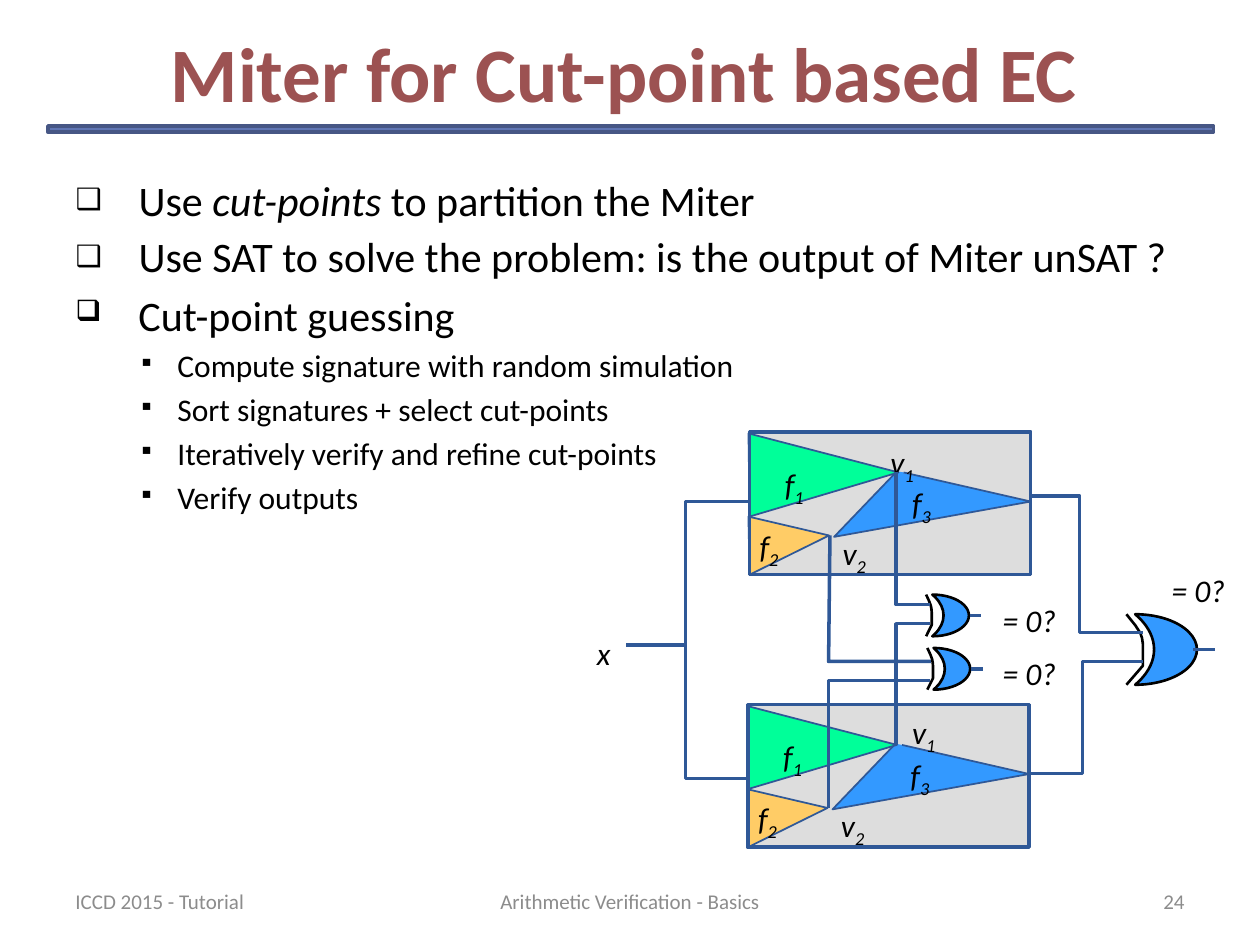
from lxml import etree
from pptx import Presentation
from pptx.dml.color import RGBColor
from pptx.enum import shapes, text
from pptx.oxml.ns import qn
from pptx.util import Pt

INK, WIRE, BLUE = "000000", "2F5897", "3399FF"


def rgb(value):
    """Turn a hex string into a colour."""
    return RGBColor.from_string(value)


def write(p, content, size=18, color=INK, bold=False, italic=False, sub=False):
    """Add one formatted run to a paragraph."""
    r = p.add_run()
    r.text = content
    r.font.name, r.font.size = "Calibri", Pt(size)
    r.font.bold, r.font.italic = bold, italic
    r.font.color.rgb = rgb(color)
    if sub:
        r.font._element.set("baseline", "-25000")


def bullet(p, mark, left, hang):
    """Give a paragraph a bullet with a hanging indent."""
    p.space_before = Pt(3.5)
    pPr = p._p.get_or_add_pPr()
    pPr.set("marL", str(Pt(left)))
    pPr.set("indent", str(-Pt(hang)))
    etree.SubElement(pPr, qn("a:buSzPct")).set("val", "70000")
    etree.SubElement(pPr, qn("a:buChar")).set("char", mark)


def fill_list(tf, items):
    """Fill a text frame with (level, runs) items; every second run is italic."""
    tf.word_wrap = True
    for i, (level, runs) in enumerate(items):
        p = tf.add_paragraph() if i else tf.paragraphs[0]
        p.level = level
        bullet(p, *(("▪", 58.3, 22.3) if level else ("❑", 36, 36)))
        for j, content in enumerate(runs):
            write(p, content, size=18 if level else 24, italic=j % 2 == 1)


def place(sp, x, y, w, h):
    """Move and size a shape."""
    sp.left, sp.top, sp.width, sp.height = Pt(x), Pt(y), Pt(w), Pt(h)


def box(slide, x, y, w, h):
    """Add a text box and return its text frame."""
    return slide.shapes.add_textbox(Pt(x), Pt(y), Pt(w), Pt(h)).text_frame


def label(slide, content, x, y, w, sub=""):
    """Add an italic label with an optional subscript."""
    tf = box(slide, x, y, w, 28.8)
    tf.word_wrap = False
    p = tf.paragraphs[0]
    write(p, content, italic=True)
    if sub:
        write(p, sub, italic=True, sub=True)


def footer(slide, content, x, w, align):
    """Add one grey footer entry."""
    tf = box(slide, x, 500.4, w, 28.8)
    tf.word_wrap = True
    tf.vertical_anchor = text.MSO_ANCHOR.MIDDLE
    tf.paragraphs[0].alignment = align
    write(tf.paragraphs[0], content, size=12, color="8C8C8C")


def style(sp, fill, line, width):
    """Set fill and outline, without shadow."""
    sp.shadow.inherit = False
    if fill:
        sp.fill.solid()
        sp.fill.fore_color.rgb = rgb(fill)
    else:
        sp.fill.background()
    sp.line.color.rgb = rgb(line)
    sp.line.width = Pt(width)


def preset(slide, kind, x, y, w, h, fill=None, line=WIRE, width=2):
    """Add a preset shape."""
    sp = slide.shapes.add_shape(kind, Pt(x), Pt(y), Pt(w), Pt(h))
    style(sp, fill, line, width)
    return sp


def outline(slide, points, fill=None, line=WIRE, width=2, close=False):
    """Draw a path through points."""
    pts = [(Pt(x), Pt(y)) for x, y in points]
    fb = slide.shapes.build_freeform(*pts[0])
    fb.add_line_segments(pts[1:], close=close)
    style(fb.convert_to_shape(), fill, line, width)


def connect(slide, x1, x2, y):
    """Draw a horizontal wire."""
    cx = slide.shapes.add_connector(
        shapes.MSO_CONNECTOR.STRAIGHT, Pt(x1), Pt(y), Pt(x2), Pt(y))
    cx.line.color.rgb = rgb(WIRE)
    cx.line.width = Pt(2)
    etree.SubElement(cx._element.spPr, qn("a:effectLst"))


def xor_gate(slide, x, y, w, h, gap, arc, out):
    """Draw an XOR gate with its input arc and output wire."""
    sp = preset(slide, shapes.MSO_SHAPE.MOON, x, y, w, h, BLUE, INK, 1.5)
    sp.adjustments[0] = 0.694
    sp._element.spPr.get_or_add_xfrm().set("flipH", "1")
    curve = [(0, 0), (0.24, 0.07), (0.55, 0.16), (0.85, 0.27), (0.95, 0.34),
             (1, 0.42), (1, 0.5), (1, 0.73), (0, 1)]
    outline(slide, [(x - gap + arc * a, y + h * b) for a, b in curve],
            line=INK, width=1.5)
    connect(slide, *out, y + h / 2)


def circuit(slide, x, y, v1):
    """Draw one circuit block, with label v1 at the given offset."""
    rect = shapes.MSO_SHAPE.RECTANGLE
    preset(slide, rect, x, y, 160.6, 81.4, "DDDDDD")
    cones = [
        ([(88, 23), (160.6, 39.6), (48.2, 59.8), (84.2, 22.3)], BLUE, False),
        ([(-0.7, 0.7), (85, 23), (0, 48.2)], "00FF99", True),
        ([(-0.7, 48.2), (45.4, 59), (0, 81.4)], "FFCC66", True),
    ]
    for points, fill, close in cones:
        outline(slide, [(x + a, y + b) for a, b in points], fill, width=1, close=close)
    preset(slide, rect, x, y, 160.6, 81.4)
    names = [("f", "1", 13, 15.1, 25.9), ("f", "2", -1.4, 50.4, 25.9),
             ("f", "3", 85.7, 25.9, 25.9), ("v", "1", *v1, 28.8),
             ("v", "2", 46, 54.4, 28.8)]
    for name, sub, dx, dy, w in names:
        label(slide, name, x + dx, y + dy, w, sub)


def miter(slide):
    """Draw the miter: two circuits, three gates and their wires."""
    xor_gate(slide, 648.7, 351, 35.3, 40.3, 5, 9.4, (681.8, 694.1))
    label(slide, "= 0?", 662.4, 322.6, 45.4)
    circuit(slide, 428.4, 247, (73.4, 2.9))
    for x, y in [(532.8, 339.8), (533.5, 370.3)]:
        xor_gate(slide, x, y, 20.9, 23.8, 3.6, 3.2, (x + 21.3, x + 28))
        label(slide, "= 0?", 565.9, y, 45.4)
    circuit(slide, 427.5, 402.7, (86.6, 1.4))
    wires = [
        [(428.4, 286.6), (391.7, 286.6), (391.7, 445), (427.7, 445)],
        [(588.2, 442), (618.5, 442), (618.5, 378), (653, 378)],
        [(589, 283.5), (617, 283.5), (617, 361.5), (653, 361.5)],
        [(512, 269.5), (512, 345.4), (531.4, 345.4)],
        [(512, 425.5), (512, 356.4), (531.4, 356.4)],
        [(473.5, 462), (473.5, 388.8), (531.4, 388.8)],
        [(474.3, 306), (473.5, 378), (532, 378)],
    ]
    for wire in wires:
        outline(slide, wire)
    connect(slide, 391.7, 357.8, 368.6)
    label(slide, "x", 334, 358.6, 22.3)


def main():
    """Build the slide."""
    prs = Presentation()
    prs.slide_width, prs.slide_height = Pt(720), Pt(540)
    slide = prs.slides.add_slide(prs.slide_layouts[1])
    title, body = slide.placeholders
    place(title, 5.8, 9.4, 702, 62.6)
    tf = title.text_frame
    tf.auto_size = text.MSO_AUTO_SIZE.NONE
    tf.vertical_anchor = text.MSO_ANCHOR.MIDDLE
    tf.paragraphs[0].alignment = text.PP_ALIGN.CENTER
    write(tf.paragraphs[0], "Miter for Cut-point based EC", size=44,
          color="9C5252", bold=True)
    preset(slide, shapes.MSO_SHAPE.RECTANGLE, 27.4, 72, 666, 3.6, "6076B4", "475785")

    place(body, 36, 96, 648, 96)
    body.text_frame.auto_size = text.MSO_AUTO_SIZE.NONE
    fill_list(body.text_frame, [
        (0, ["Use ", "cut-points ", "to partition the Miter"]),
        (0, ["Use SAT to solve the problem: is the output of Miter unSAT ?"]),
    ])
    fill_list(box(slide, 36, 162, 406, 141), [
        (0, ["Cut-point guessing"]),
        (1, ["Compute signature with random simulation"]),
        (1, ["Sort signatures + select cut-points"]),
        (1, ["Iteratively verify and refine cut-points"]),
        (1, ["Verify outputs"]),
    ])
    miter(slide)
    footer(slide, "ICCD 2015 - Tutorial", 36, 168, text.PP_ALIGN.LEFT)
    footer(slide, "Arithmetic Verification - Basics", 246, 228, text.PP_ALIGN.CENTER)
    footer(slide, "24", 516, 168, text.PP_ALIGN.RIGHT)
    prs.save("out.pptx")


if __name__ == "__main__":
    main()
